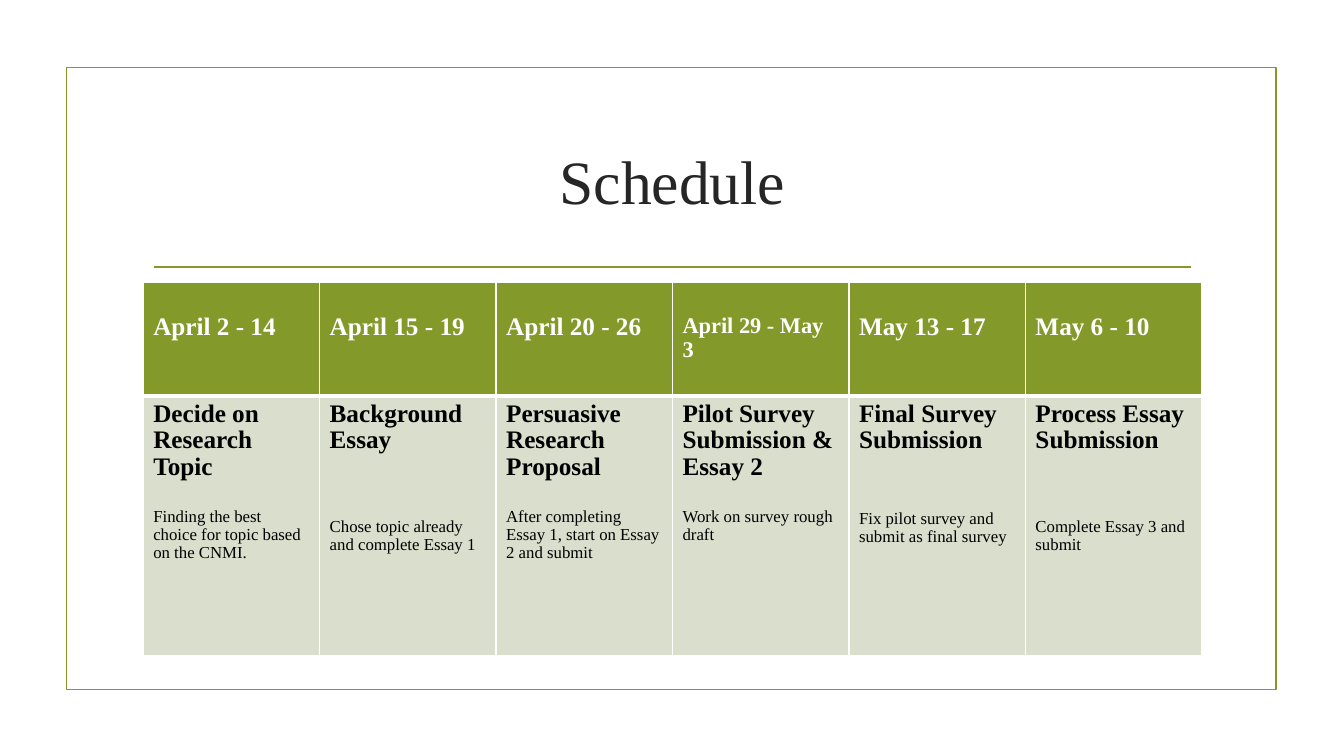
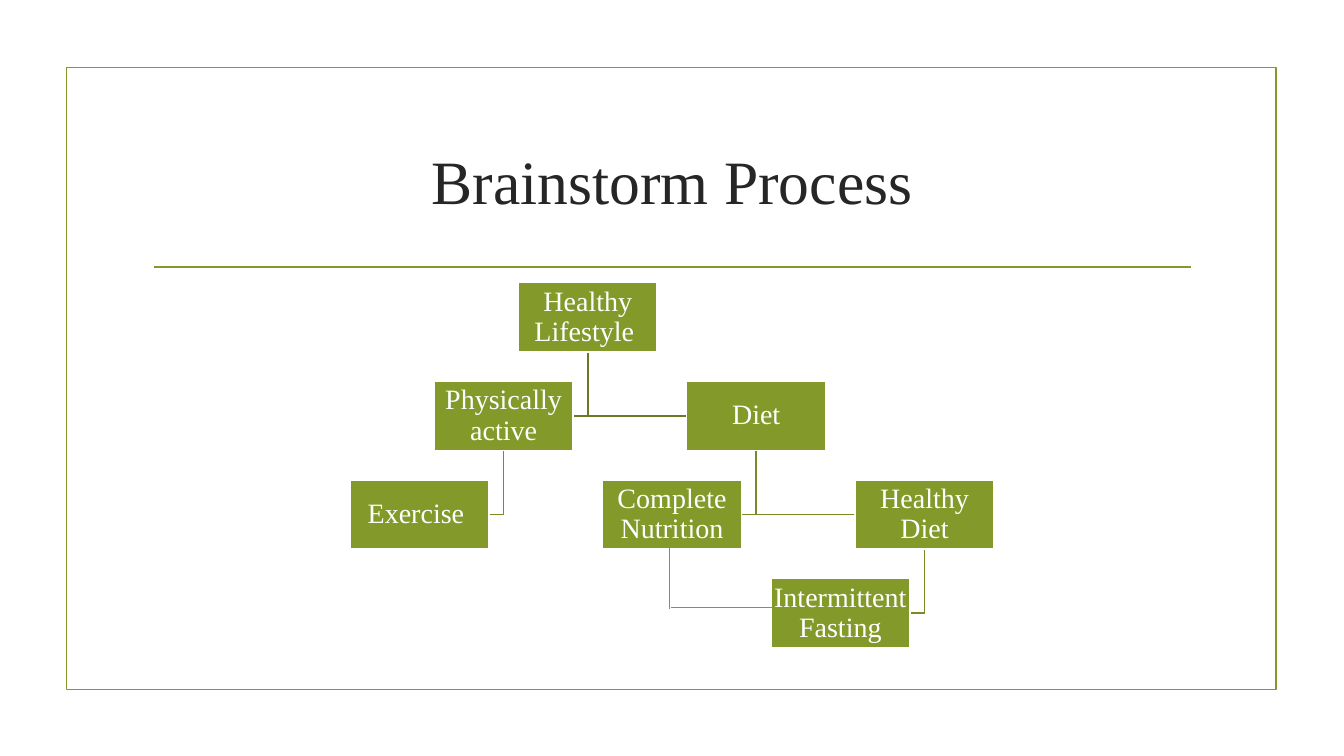
from lxml import etree
from pptx import Presentation
from pptx import util as u
from pptx.dml.color import RGBColor
from pptx.enum import shapes, text
from pptx.oxml import ns

GREEN = "83992A"
WHITE = "FFFFFF"
FONT = "Times New Roman"


def paint(target, color):
    if hasattr(target, "solid"):
        target.solid()
        target = target.fore_color
    target.rgb = RGBColor.from_string(color)


def style(para, size, color, bold=False):
    for span in para.runs:
        span.font.name = FONT
        span.font.size = u.Pt(size)
        span.font.bold = bold
        paint(span.font.color, color)


deck = Presentation()
deck.slide_width = u.Inches(13.33)
deck.slide_height = u.Inches(7.5)

pages = []
for title in ("Schedule", "Brainstorm Process"):
    page = deck.slides.add_slide(deck.slide_layouts[6])
    frame = page.shapes.add_shape(
        shapes.MSO_SHAPE.RECTANGLE,
        u.Inches(0.66), u.Inches(0.67), u.Inches(12), u.Inches(6.17))
    frame.shadow.inherit = False
    frame.fill.background()
    paint(frame.line.fill, GREEN)
    frame.line.width = u.Pt(1.25)

    box = page.shapes.add_textbox(
        u.Inches(1.42), u.Inches(1.07), u.Inches(10.5), u.Inches(1.43))
    box.text_frame.word_wrap = True
    box.text_frame.vertical_anchor = text.MSO_ANCHOR.MIDDLE
    box.text_frame.text = title
    para = box.text_frame.paragraphs[0]
    para.alignment = text.PP_ALIGN.CENTER
    style(para, 44, "262626")
    pages.append(page)

schedule_page, brainstorm_page = pages

schedule = [
    ("April 2 - 14", 18, "Decide on Research Topic", 20,
     "Finding the best choice for topic based on the CNMI."),
    ("April 15 - 19", 18, "Background Essay", 46,
     "Chose topic already and complete Essay 1"),
    ("April 20 - 26", 18, "Persuasive Research Proposal", 20,
     "After completing Essay 1, start on Essay 2 and submit"),
    ("April 29 - May 3", 16, "Pilot Survey Submission & Essay 2", 20,
     "Work on survey rough draft"),
    ("May 13 - 17", 18, "Final Survey Submission", 40,
     "Fix pilot survey and submit as final survey"),
    ("May 6 - 10", 18, "Process Essay Submission", 46,
     "Complete Essay 3 and submit"),
]
table = schedule_page.shapes.add_table(
    2, len(schedule),
    u.Inches(1.42), u.Inches(2.8), u.Inches(10.5), u.Inches(3.7)).table
table.rows[0].height = u.Inches(1.13)
table.rows[1].height = u.Inches(2.57)

for column, (dates, date_size, task, gap, detail) in enumerate(schedule):
    date_cell = table.cell(0, column)
    date_cell.margin_top = u.Inches(0.32)
    date_cell.text_frame.text = dates
    style(date_cell.text_frame.paragraphs[0], date_size, WHITE, True)

    task_cell = table.cell(1, column)
    task_cell.text_frame.text = task
    style(task_cell.text_frame.paragraphs[0], 18, "000000", True)
    para = task_cell.text_frame.add_paragraph()
    para.text = detail
    para.space_before = u.Pt(gap)
    style(para, 12, "000000")

    for cell, fill, top, bottom in ((date_cell, GREEN, 1, 3),
                                    (task_cell, "D9DECD", 3, 1)):
        for para in cell.text_frame.paragraphs:
            para.line_spacing = 0.95
        properties = cell._tc.get_or_add_tcPr()
        for side, width in (("L", 1), ("R", 1), ("T", top), ("B", bottom)):
            border = etree.SubElement(
                properties, ns.qn("a:ln" + side), w=str(u.Pt(width)))
            solid = etree.SubElement(border, ns.qn("a:solidFill"))
            etree.SubElement(solid, ns.qn("a:srgbClr"), val=WHITE)
        paint(cell.fill, fill)

box_width, box_height, box_gap = 1.38, 0.69, 0.29
column_step = (box_width + box_gap) / 2
row_step = box_height + box_gap
topics = {
    "Healthy Lifestyle ": (2, 0),
    "Physically active": (1, 1),
    "Exercise ": (0, 2),
    "Diet": (4, 1),
    "Complete Nutrition": (3, 2),
    "Healthy Diet": (6, 2),
    "Intermittent Fasting": (5, 3),
}
branches = [
    ("Healthy Diet", "Intermittent Fasting"),
    ("Diet", "Healthy Diet"),
    ("Diet", "Complete Nutrition"),
    ("Healthy Lifestyle ", "Diet"),
    ("Physically active", "Exercise "),
    ("Healthy Lifestyle ", "Physically active"),
]
corners = {
    topic: (3.47 + column * column_step, 2.8 + row * row_step)
    for topic, (column, row) in topics.items()
}

for parent, child in branches:
    parent_left, parent_top = corners[parent]
    child_left, child_top = corners[child]
    stem = u.Inches(parent_left + box_width / 2)
    middle = u.Inches(child_top + box_height / 2)
    edge = child_left if child_left > parent_left else child_left + box_width
    outline = brainstorm_page.shapes.build_freeform(
        stem, u.Inches(parent_top + box_height))
    outline.add_line_segments(
        [(stem, middle), (u.Inches(edge), middle)], close=False)
    branch = outline.convert_to_shape()
    branch.shadow.inherit = False
    branch.fill.background()
    paint(branch.line.fill, "697B22" if topics[parent][1] == 0 else "778B26")
    branch.line.width = u.Pt(1.25)

for topic, (left, top) in corners.items():
    box = brainstorm_page.shapes.add_shape(
        shapes.MSO_SHAPE.RECTANGLE, u.Inches(left), u.Inches(top),
        u.Inches(box_width), u.Inches(box_height))
    box.shadow.inherit = False
    paint(box.fill, GREEN)
    paint(box.line.fill, WHITE)
    box.line.width = u.Pt(1.25)
    body = box.text_frame
    body.word_wrap = True
    body.vertical_anchor = text.MSO_ANCHOR.MIDDLE
    body.margin_left = body.margin_right = u.Inches(0.01)
    body.margin_top = body.margin_bottom = u.Inches(0.01)
    body.text = topic
    para = body.paragraphs[0]
    para.alignment = text.PP_ALIGN.CENTER
    para.line_spacing = 0.9
    style(para, 20, WHITE)

title_rule = (1.53, 2.65, 11.81, 2.65, 1.25)
rules = [
    (schedule_page, title_rule),
    (brainstorm_page, title_rule),
    (brainstorm_page, (6.64, 5.43, 6.64, 6.04, 0.75)),
    (brainstorm_page, (6.66, 6.03, 7.96, 6.03, 0.75)),
]
for page, (*ends, width) in rules:
    rule = page.shapes.add_connector(
        shapes.MSO_CONNECTOR.STRAIGHT, *map(u.Inches, ends))
    paint(rule.line.fill, GREEN)
    rule.line.width = u.Pt(width)
    etree.SubElement(rule._element.spPr, ns.qn("a:effectLst"))

deck.save("out.pptx")
